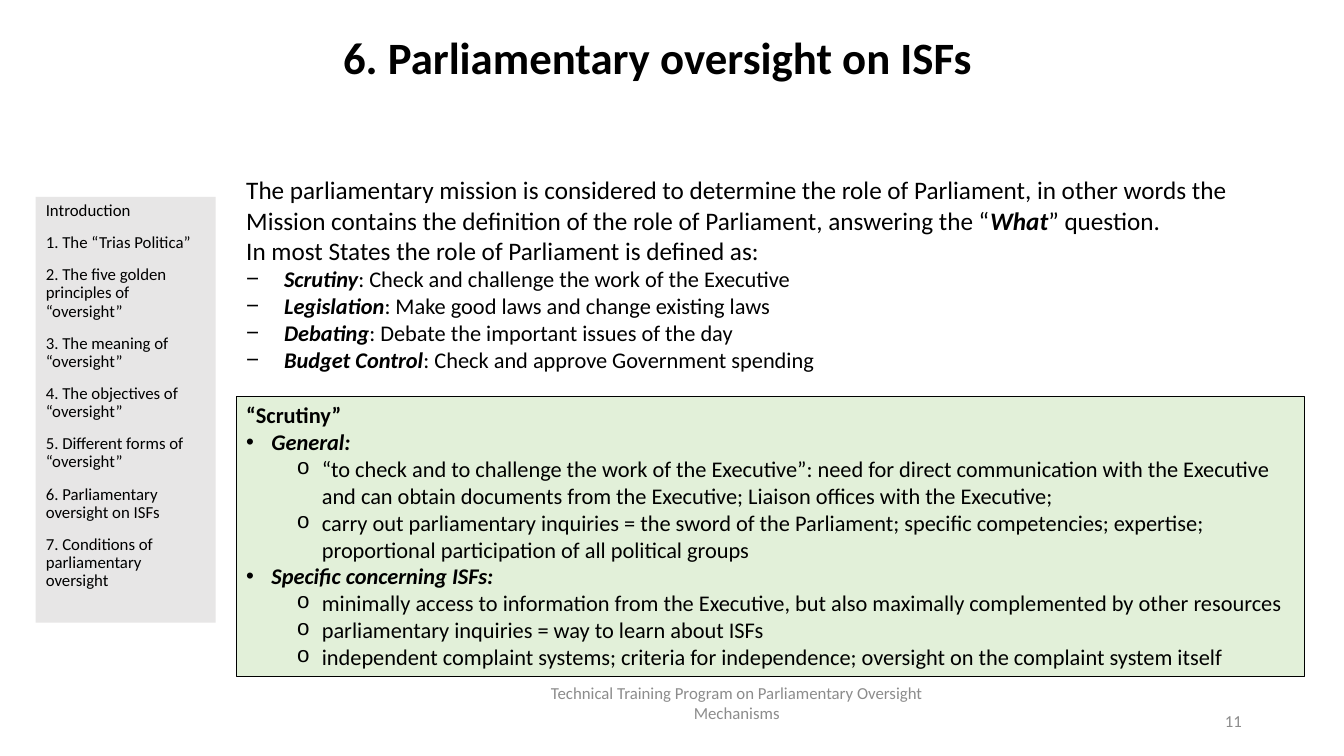
import pptx
import pptx.util
import pptx.dml.color
import pptx.enum.shapes
import pptx.enum.text
import pptx.oxml.ns
from lxml import etree

Pt = pptx.util.Pt
RGBColor = pptx.dml.color.RGBColor
Align = pptx.enum.text.PP_ALIGN
Anchor = pptx.enum.text.MSO_ANCHOR

BLACK = RGBColor(0x00, 0x00, 0x00)
GREY = RGBColor(0x8C, 0x8C, 0x8C)
SIDEBAR_GREY = RGBColor(0xE7, 0xE6, 0xE6)
SCRUTINY_GREEN = RGBColor(0xE2, 0xF0, 0xD9)


def place(shape, left, top, width, height, anchor=Anchor.TOP):
    """Move the shape and return its wrapping text frame."""
    shape.left, shape.top = Pt(left), Pt(top)
    shape.width, shape.height = Pt(width), Pt(height)
    frame = shape.text_frame
    frame.word_wrap = True
    frame.auto_size = pptx.enum.text.MSO_AUTO_SIZE.NONE
    frame.vertical_anchor = anchor
    return frame


def write(frame, segments, size, color=BLACK, align=Align.LEFT, spacing=1.0,
          before=0, bullet=None, margin=0, hanging=0, tab=None):
    """Add a paragraph of (text, style) segments; style holds b and/or i."""
    started = bool(frame.paragraphs[0].runs)
    paragraph = frame.add_paragraph() if started else frame.paragraphs[0]
    properties = paragraph._p.get_or_add_pPr()
    properties.set("marL", str(Pt(margin)))
    properties.set("indent", str(Pt(-hanging)))
    qn = pptx.oxml.ns.qn
    if bullet:
        bullet_font = "Courier New" if bullet == "o" else "Arial"
        etree.SubElement(properties, qn("a:buFont"), typeface=bullet_font)
        etree.SubElement(properties, qn("a:buChar"), char=bullet)
    else:
        etree.SubElement(properties, qn("a:buNone"))
    if tab:
        tabs = etree.SubElement(properties, qn("a:tabLst"))
        etree.SubElement(tabs, qn("a:tab"), pos=str(Pt(tab)), algn="l")
    paragraph.alignment = align
    paragraph.line_spacing = spacing
    paragraph.space_before = Pt(before if started else 0)
    for text, style in segments:
        run = paragraph.add_run()
        run.text = text
        run.font.name = "Calibri"
        run.font.size = Pt(size)
        run.font.bold = "b" in style
        run.font.italic = "i" in style
        run.font.color.rgb = color


deck = pptx.Presentation()
deck.slide_width, deck.slide_height = Pt(960), Pt(540)
slide = deck.slides.add_slide(deck.slide_layouts[1])
shapes = slide.shapes

# Title
title = place(shapes.title, 216, 21.6, 507.6, 90)
write(title, [("6. Parliamentary oversight on ISFs", "b")], 32,
      align=Align.CENTER, spacing=0.9)

# Outline sidebar
sidebar = slide.placeholders[1]
sidebar.fill.solid()
sidebar.fill.fore_color.rgb = SIDEBAR_GREY
outline = place(sidebar, 25.5, 140.7, 128.5, 304)
for chapter in (
    "Introduction",
    "1. The “Trias Politica”",
    "2. The five golden principles of “oversight”",
    "3. The meaning of “oversight”",
    "4. The objectives of “oversight”",
    "5. Different forms of “oversight”",
    "6. Parliamentary oversight on ISFs",
    "7. Conditions of parliamentary oversight",
):
    write(outline, [(chapter, "")], 12, spacing=0.9, before=10)

# Mission and roles of Parliament
mission = place(shapes.add_textbox(0, 0, 0, 0), 168.8, 121.2, 763, 152.6)
write(mission, [
    ("The parliamentary mission is considered to determine the role of "
     "Parliament, in other words the Mission contains the definition of the "
     "role of Parliament, answering the “", ""),
    ("What", "bi"),
    ("” question.", ""),
], 18)
write(mission, [("In most States the role of Parliament is defined as:", "")],
      18, align=Align.JUSTIFY)
for role, duty in (
    ("Scrutiny", "Check and challenge the work of the Executive"),
    ("Legislation", "Make good laws and change existing laws"),
    ("Debating", "Debate the important issues of the day"),
    ("Budget Control", "Check and approve Government spending"),
):
    write(mission, [(role, "bi"), (": " + duty, "")], 16,
          bullet="−", margin=27, hanging=27, tab=18)

# Scrutiny panel
panel = shapes.add_shape(pptx.enum.shapes.MSO_SHAPE.RECTANGLE, 0, 0, 0, 0)
panel.shadow.inherit = False
panel.fill.solid()
panel.fill.fore_color.rgb = SCRUTINY_GREEN
panel.line.color.rgb = BLACK
panel.line.width = Pt(0.75)
scrutiny = place(panel, 168.8, 283.2, 763, 200)
write(scrutiny, [("“Scrutiny”", "b")], 16)
for heading, points in (
    ("General:", (
        "“to check and to challenge the work of the Executive”: need for "
        "direct communication with the Executive and can obtain documents "
        "from the Executive; Liaison offices with the Executive;",
        "carry out parliamentary inquiries = the sword of the Parliament; "
        "specific competencies; expertise; proportional participation of all "
        "political groups",
    )),
    ("Specific concerning ISFs:", (
        "minimally access to information from the Executive, but also "
        "maximally complemented by other resources",
        "parliamentary inquiries = way to learn about ISFs",
        "independent complaint systems; criteria for independence; oversight "
        "on the complaint system itself",
    )),
):
    write(scrutiny, [(heading, "bi")], 16, bullet="•", margin=18, hanging=18)
    for point in points:
        write(scrutiny, [(point, "")], 16, bullet="o", margin=54, hanging=18)
        scrutiny.paragraphs[-1].level = 1

# Footer and slide number
footer = place(shapes.add_textbox(0, 0, 0, 0), 364.3, 487.5, 324, 28.8,
               Anchor.MIDDLE)
write(footer, [("Technical Training Program on Parliamentary Oversight "
                "Mechanisms", "")], 12, GREY, Align.CENTER)
number = place(shapes.add_textbox(0, 0, 0, 0), 678.2, 500.5, 216, 28.8,
               Anchor.MIDDLE)
write(number, [("11", "")], 12, GREY, Align.RIGHT)

deck.save("out.pptx")
